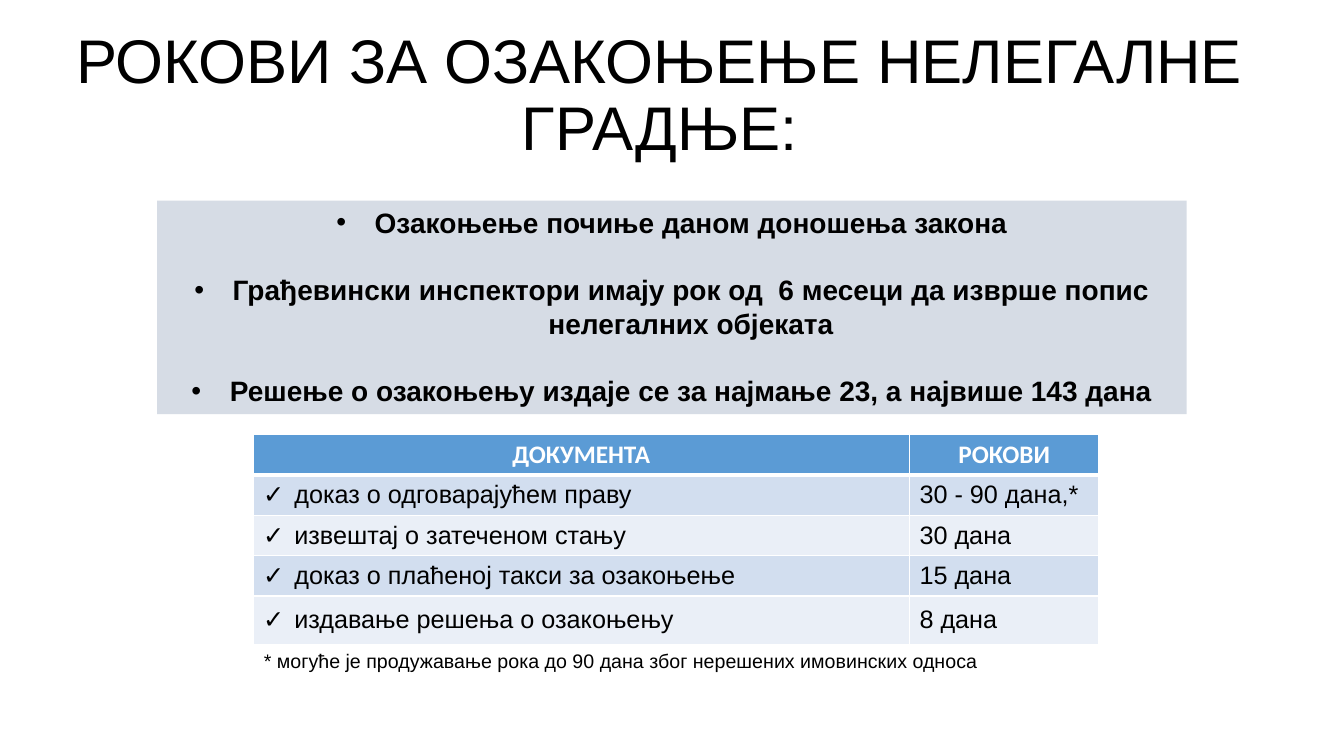
import lxml.etree
import pptx
import pptx.dml.color
import pptx.enum.shapes
import pptx.enum.text
import pptx.oxml.ns
import pptx.util

SLIDE_WIDTH, SLIDE_HEIGHT = 13.33, 7.5
COLORS = {
    "black": "000000",
    "white": "FFFFFF",
    "panel": "D6DCE5",
    "header": "5B9BD5",
    "odd": "D2DEEF",
    "even": "EAEFF7",
}
ALIGN = pptx.enum.text.PP_ALIGN
ANCHOR = pptx.enum.text.MSO_ANCHOR

TITLE = "РОКОВИ ЗА ОЗАКОЊЕЊЕ НЕЛЕГАЛНЕ ГРАДЊЕ:"
RULES = [
    "Озакоњење почиње даном доношења закона",
    "Грађевински инспектори имају рок од  6 месеци да изврше попис нелегалних објеката",
    "Решење о озакоњењу издаје се за најмање 23, а највише 143 дана",
]
DEADLINES = [
    ("ДОКУМЕНТА", "РОКОВИ"),
    ("доказ о одговарајућем праву", "30 - 90 дана,*"),
    ("извештај о затеченом стању", "30 дана"),
    ("доказ о плаћеној такси за озакоњење", "15 дана"),
    ("издавање решења о озакоњењу", "8 дана"),
]
NOTE = "* могуће је продужавање рока до 90 дана због нерешених имовинских односа"


def across(percent):
    """Length as a percentage of the slide's width."""
    return pptx.util.Inches(SLIDE_WIDTH * percent / 100)


def down(percent):
    """Length as a percentage of the slide's height."""
    return pptx.util.Inches(SLIDE_HEIGHT * percent / 100)


def place(left, top, width, height):
    return across(left), down(top), across(width), down(height)


def rgb(name):
    return pptx.dml.color.RGBColor.from_string(COLORS[name])


def add_element(parent, tag, **attributes):
    element = lxml.etree.SubElement(parent, pptx.oxml.ns.qn(tag))
    for name, value in attributes.items():
        element.set(name, str(value))
    return element


def add_bullet(paragraph, character, indent):
    properties = paragraph._p.get_or_add_pPr()
    length = pptx.util.Inches(indent)
    properties.set("marL", str(length))
    properties.set("indent", str(-length))
    add_element(properties, "a:buFont", typeface="Arial")
    add_element(properties, "a:buChar", char=character)


def write_text(frame, texts, size=18, font="Arial", color="black", bold=False,
               align=ALIGN.LEFT, anchor=ANCHOR.TOP, line_spacing=None,
               gap=0, bullet=None, indent=0):
    """Write one paragraph per text, with gap points between them."""
    frame.word_wrap = True
    frame.vertical_anchor = anchor
    for index, text in enumerate(texts):
        paragraph = frame.add_paragraph() if index else frame.paragraphs[0]
        paragraph.alignment = align
        if line_spacing:
            paragraph.line_spacing = line_spacing
        if index and gap:
            paragraph.space_before = pptx.util.Pt(gap)
        if bullet:
            add_bullet(paragraph, bullet, indent)
        run = paragraph.add_run()
        run.text = text
        run.font.size = pptx.util.Pt(size)
        run.font.name = font
        run.font.bold = bold
        run.font.color.rgb = rgb(color)


def add_text_box(slide, position, text, **text_format):
    shape = slide.shapes.add_textbox(*place(*position))
    write_text(shape.text_frame, [text], **text_format)


def add_panel(slide, position, texts, **text_format):
    shape = slide.shapes.add_shape(
        pptx.enum.shapes.MSO_SHAPE.RECTANGLE, *place(*position))
    shape.shadow.inherit = False
    shape.fill.solid()
    shape.fill.fore_color.rgb = rgb("panel")
    shape.line.fill.background()
    write_text(shape.text_frame, texts, **text_format)


def set_borders(cell, **widths):
    """Draw white borders; widths in points by side L, R, T, B."""
    properties = cell._tc.get_or_add_tcPr()
    for side, width in widths.items():
        line = add_element(properties, f"a:ln{side}", w=pptx.util.Pt(width))
        fill = add_element(line, "a:solidFill")
        add_element(fill, "a:srgbClr", val=COLORS["white"])


def add_deadline_table(slide, left, top, column_widths, row_heights):
    position = place(left, top, sum(column_widths), sum(row_heights))
    table = slide.shapes.add_table(
        len(row_heights), len(column_widths), *position).table
    for column, width in zip(table.columns, column_widths):
        column.width = across(width)
    for row_index, (row, height) in enumerate(zip(table.rows, row_heights)):
        row.height = down(height)
        is_header = row_index == 0
        fill = "header" if is_header else "odd" if row_index % 2 else "even"
        for column_index, cell in enumerate(row.cells):
            set_borders(cell, L=1, R=1, T=3 if row_index == 1 else 1,
                        B=3 if is_header else 1)
            cell.fill.solid()
            cell.fill.fore_color.rgb = rgb(fill)
            if is_header:
                text_format = dict(font="Calibri", color="white", bold=True,
                                   align=ALIGN.CENTER)
            elif column_index == 0:
                text_format = dict(bullet="✓", indent=0.31)
            else:
                text_format = {}
            write_text(cell.text_frame, [DEADLINES[row_index][column_index]],
                       **text_format)
            cell.vertical_anchor = ANCHOR.MIDDLE


def main():
    presentation = pptx.Presentation()
    presentation.slide_width = pptx.util.Inches(SLIDE_WIDTH)
    presentation.slide_height = pptx.util.Inches(SLIDE_HEIGHT)
    slide = presentation.slides.add_slide(presentation.slide_layouts[6])

    add_text_box(slide, (4.2, 2.8, 89.8, 20.13), TITLE, size=44,
                 align=ALIGN.CENTER, anchor=ANCHOR.MIDDLE, line_spacing=0.9)
    add_panel(slide, (11.7, 26.53, 76.59, 28.27), RULES, size=20, bold=True,
              align=ALIGN.CENTER, gap=24, bullet="•", indent=0.38)
    add_deadline_table(slide, 18.83, 57.47, [48.84, 14.1], [5.33] * 4 + [6.4])
    add_text_box(slide, (18.9, 85.2, 62.94, 4.53), NOTE, size=14)

    presentation.save("out.pptx")


if __name__ == "__main__":
    main()
